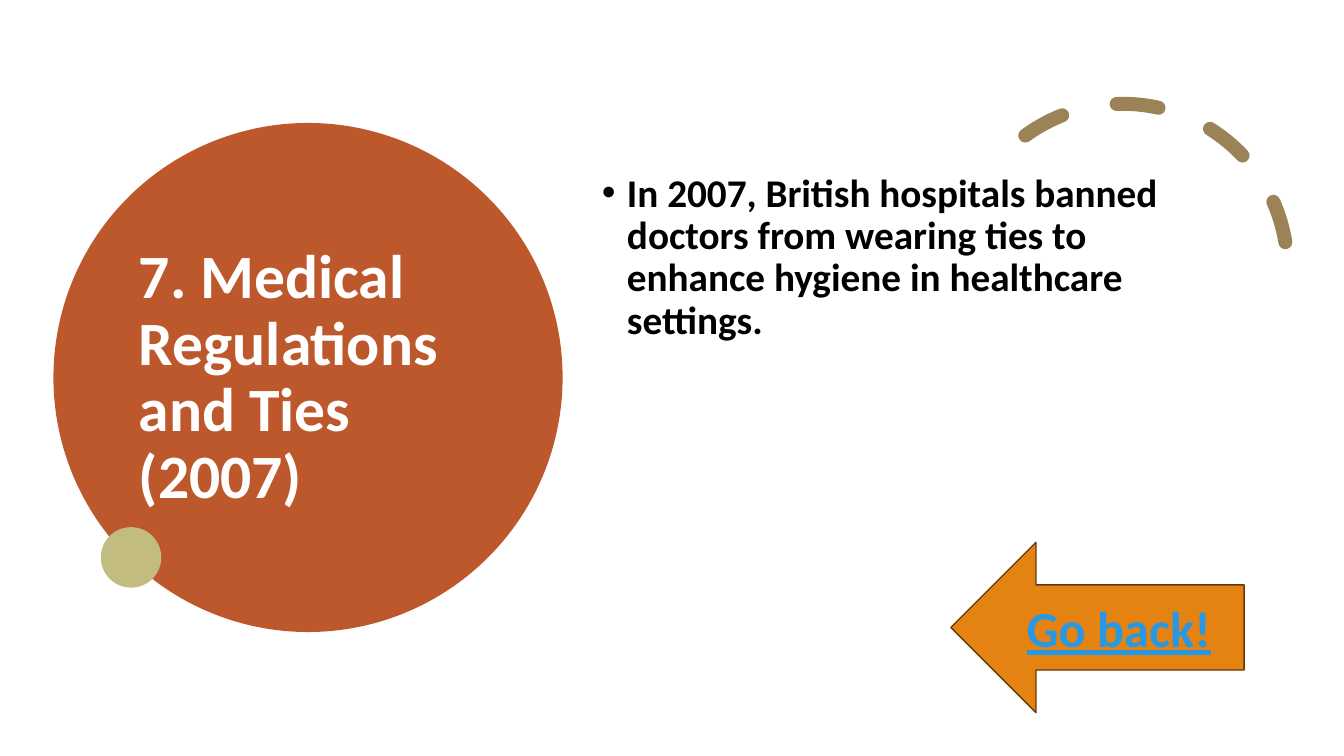
from dataclasses import dataclass
from typing import Optional

from lxml import etree
from pptx import Presentation
from pptx.dml.color import RGBColor
from pptx.enum.dml import MSO_LINE
from pptx.enum.shapes import MSO_SHAPE
from pptx.enum.text import MSO_ANCHOR, PP_ALIGN
from pptx.oxml.ns import qn
from pptx.shapes.autoshape import Shape
from pptx.slide import Slide
from pptx.util import Inches, Pt

OVAL = MSO_SHAPE.OVAL
ARC = MSO_SHAPE.ARC
ARROW = MSO_SHAPE.LEFT_ARROW
DASH = MSO_LINE.DASH
TOP = MSO_ANCHOR.TOP
MIDDLE = MSO_ANCHOR.MIDDLE
LEFT = PP_ALIGN.LEFT
CENTER = PP_ALIGN.CENTER
FONT = "Calibri"


@dataclass
class Form:
    kind: MSO_SHAPE
    left: float
    top: float
    width: float
    height: float
    fill: Optional[str] = None
    line: Optional[str] = None
    weight: float = 1


@dataclass
class Label:
    text: str
    size: float
    color: str
    anchor: MSO_ANCHOR = MIDDLE
    align: PP_ALIGN = LEFT
    spacing: float = 0.9
    under: bool = False


def paint(color: str) -> RGBColor:
    return RGBColor.from_string(color)


def draw(slide: Slide, form: Form) -> Shape:
    shape = slide.shapes.add_shape(
        form.kind, Inches(form.left), Inches(form.top),
        Inches(form.width), Inches(form.height))
    shape.shadow.inherit = False
    if form.fill:
        shape.fill.solid()
        shape.fill.fore_color.rgb = paint(form.fill)
    else:
        shape.fill.background()
    if form.line:
        shape.line.color.rgb = paint(form.line)
        shape.line.width = Pt(form.weight)
    else:
        shape.line.fill.background()
    return shape


def write(shape: Shape, label: Label) -> None:
    frame = shape.text_frame
    frame.text = label.text
    frame.word_wrap = True
    frame.vertical_anchor = label.anchor
    para = frame.paragraphs[0]
    para.alignment = label.align
    para.line_spacing = label.spacing
    font = para.runs[0].font
    font.name = FONT
    font.size = Pt(label.size)
    font.bold = True
    font.underline = label.under
    font.color.rgb = paint(label.color)


def place(slide: Slide, left: float, top: float, width: float,
          height: float, label: Label) -> Shape:
    box = slide.shapes.add_textbox(
        Inches(left), Inches(top), Inches(width), Inches(height))
    write(box, label)
    return box


def bullet(box: Shape, indent: float) -> None:
    para = box.text_frame.paragraphs[0]
    para.space_before = Pt(10)
    props = para._p.get_or_add_pPr()
    props.set("marL", str(Inches(indent)))
    props.set("indent", str(-Inches(indent)))
    etree.SubElement(props, qn("a:buFont")).set("typeface", "Arial")
    etree.SubElement(props, qn("a:buChar")).set("char", "•")


def main() -> None:
    deck = Presentation()
    deck.slide_width = Inches(13.33)
    deck.slide_height = Inches(7.5)
    slide = deck.slides.add_slide(deck.slide_layouts[6])

    draw(slide, Form(OVAL, 0.53, 1.22, 5.05, 5.05, "BD582C"))
    place(slide, 1.28, 1.53, 3.99, 4.45,
          Label("7. Medical Regulations and Ties (2007)", 44, "FFFFFF"))

    arc = draw(slide, Form(ARC, 9.5, 1.03, 3.27, 3.27,
                           line="9B8357", weight=10))
    arc.rotation = 330.2
    arc.adjustments[0] = 158.17
    arc.adjustments[1] = 17.81
    arc.line.dash_style = DASH
    arc.line._get_or_add_ln().set("cap", "rnd")

    draw(slide, Form(OVAL, 1, 5.23, 0.6, 0.6, "C2BC80"))
    body = place(slide, 5.87, 1.67, 6.05, 4.3, Label(
        "In 2007, British hospitals banned doctors from wearing ties "
        "to enhance hygiene in healthcare settings.", 28, "000000", TOP))
    bullet(body, 0.25)

    back = draw(slide, Form(ARROW, 9.43, 5.38, 2.91, 1.69,
                            "E48312", "643908"))
    write(back, Label("Go back!", 36, "2998E3", align=CENTER,
                      spacing=1.0, under=True))
    deck.save("out.pptx")


if __name__ == "__main__":
    main()
